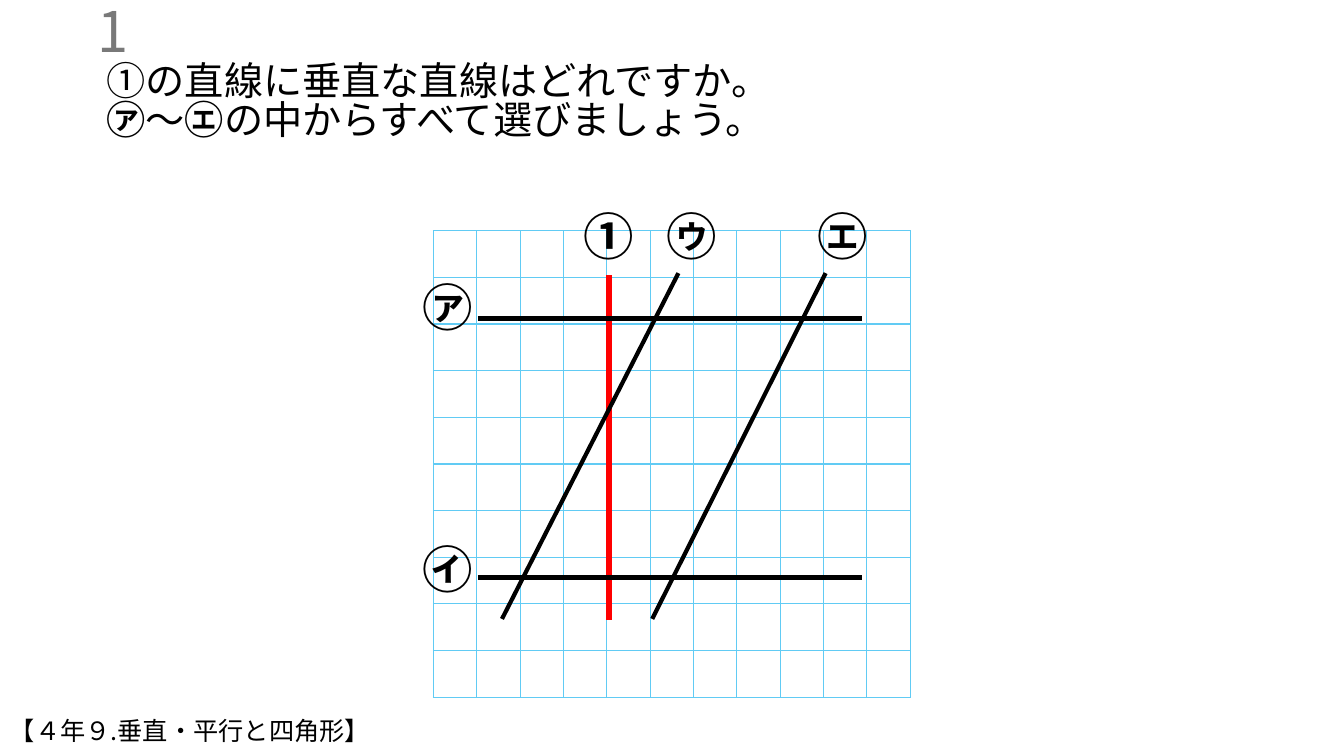
import pptx
import pptx.dml.color
import pptx.enum.shapes
import pptx.enum.text
import pptx.oxml.ns
import pptx.util
from lxml import etree

BLACK = pptx.dml.color.RGBColor(0x00, 0x00, 0x00)
GRAY = pptx.dml.color.RGBColor(0x79, 0x79, 0x79)
RED = pptx.dml.color.RGBColor(0xFF, 0x00, 0x00)
SKY = pptx.dml.color.RGBColor(0x61, 0xCB, 0xF4)
ALIGN = pptx.enum.text.PP_ALIGN
ANCHOR = pptx.enum.text.MSO_ANCHOR
qn = pptx.oxml.ns.qn


class Worksheet:
    font_name = "Noto Sans CJK JP"

    def __init__(self, presentation):
        self.width = presentation.slide_width
        self.height = presentation.slide_height
        self.slide = presentation.slides.add_slide(presentation.slide_layouts[6])

    def across(self, percent):
        return round(self.width * percent / 100)

    def down(self, percent):
        return round(self.height * percent / 100)

    def place(self, left, top, width, height):
        return self.across(left), self.down(top), self.across(width), self.down(height)

    def text(self, area, lines, size, color=BLACK, align=ALIGN.LEFT,
             anchor=ANCHOR.TOP, spacing=0.83):
        frame = self.slide.shapes.add_textbox(*self.place(*area)).text_frame
        frame.word_wrap = True
        frame.vertical_anchor = anchor
        for index, runs in enumerate(lines):
            paragraph = frame.paragraphs[0] if index == 0 else frame.add_paragraph()
            paragraph.alignment = align
            paragraph.line_spacing = spacing
            for content, bold in runs:
                run = paragraph.add_run()
                run.text = content
                style = {"name": self.font_name, "size": pptx.util.Pt(size), "bold": bold}
                for name, value in style.items():
                    setattr(run.font, name, value)
                run.font.color.rgb = color
                east_asian = etree.SubElement(run.font._element, qn("a:ea"))
                east_asian.set("typeface", self.font_name)

    def label(self, left, top, symbol):
        self.text((left, top, 4.8, 9.47), [[(symbol, True)]], 36)

    def line(self, start, end, color=BLACK, weight=3):
        connector = self.slide.shapes.add_connector(
            pptx.enum.shapes.MSO_CONNECTOR.STRAIGHT,
            self.across(start[0]), self.down(start[1]),
            self.across(end[0]), self.down(end[1]))
        connector.line.color.rgb = color
        connector.line.width = pptx.util.Pt(weight)
        etree.SubElement(connector._element.spPr, qn("a:effectLst"))

    def squared_paper(self, area, rows, columns):
        left, top, width, height = self.place(*area)
        table = self.slide.shapes.add_table(rows, columns, left, top, width, height).table
        for flag in ("first_row", "horz_banding"):
            setattr(table, flag, False)
        for cell in table.iter_cells():
            properties = cell._tc.get_or_add_tcPr()
            for side in ("lnL", "lnR", "lnT", "lnB"):
                border = etree.SubElement(properties, qn(f"a:{side}"), w=str(pptx.util.Pt(1)))
                fill = etree.SubElement(border, qn("a:solidFill"))
                etree.SubElement(fill, qn("a:srgbClr"), val=str(SKY))
            cell.fill.background()


def main():
    presentation = pptx.Presentation()
    presentation.slide_width = pptx.util.Inches(13.33)
    presentation.slide_height = pptx.util.Inches(7.5)
    sheet = Worksheet(presentation)

    sheet.text((-12.23, 1.33, 22.5, 5.33), [[("1", False)]], 40, GRAY,
               ALIGN.RIGHT, ANCHOR.MIDDLE, 1.0)
    sheet.squared_paper((32.25, 30.53, 35.48, 61.73), 10, 11)

    sheet.line((45.3, 36.4), (45.3, 82), RED, 4.5)
    for level in (76.4, 42.13):
        sheet.line((35.55, level), (64.13, level))
    for upper, lower in ((61.43, 48.53), (50.48, 37.35)):
        sheet.line((upper, 36.13), (lower, 81.87))

    sheet.text((7.2, 7.87, 86.48, 13.87), [
        [("①の直線に垂直な直線はどれですか。", False)],
        [("㋐", True), ("～", False), ("㋓", True), ("の中からすべて選びましょう。", False)],
    ], 28)
    for left, top, symbol in (
        (42.68, 27.87, "①"), (30.68, 37.2, "㋐"), (30.68, 71.87, "㋑"),
        (60.08, 27.87, "㋓"), (48.83, 27.87, "㋒"),
    ):
        sheet.label(left, top, symbol)
    sheet.text((0, 94.67, 56.19, 5.33), [[("【４年９.垂直・平行と四角形】", False)]], 18)

    presentation.save("out.pptx")


if __name__ == "__main__":
    main()
